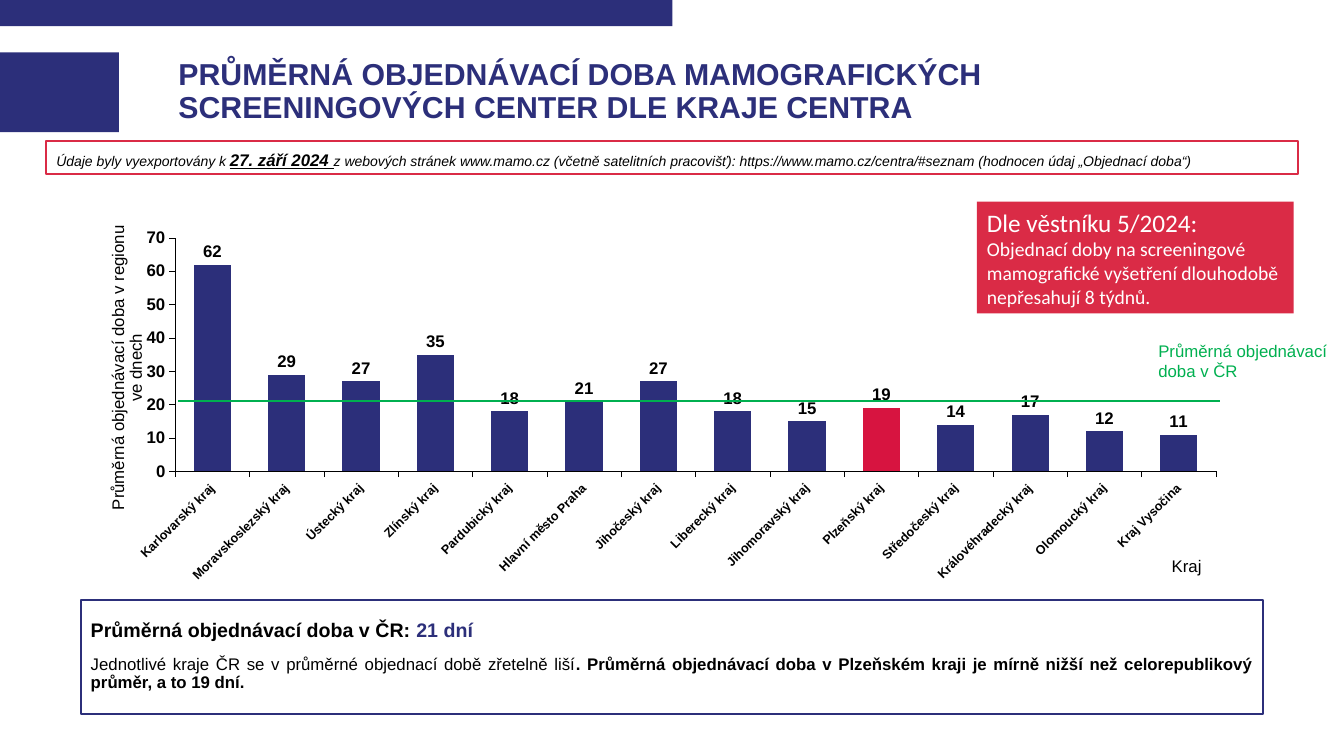
from lxml import etree
from pptx import Presentation
from pptx.chart.data import CategoryChartData
from pptx.dml.color import RGBColor
from pptx.enum.chart import XL_CHART_TYPE, XL_LABEL_POSITION, XL_TICK_MARK
from pptx.enum.shapes import MSO_CONNECTOR, MSO_SHAPE
from pptx.enum.text import MSO_ANCHOR, MSO_AUTO_SIZE, PP_ALIGN
from pptx.oxml import parse_xml
from pptx.oxml.ns import nsdecls, qn
from pptx.util import Inches, Pt

LEFT, JUSTIFY = PP_ALIGN.LEFT, PP_ALIGN.JUSTIFY
TOP, MIDDLE = MSO_ANCHOR.TOP, MSO_ANCHOR.MIDDLE
FIXED_SIZE = MSO_AUTO_SIZE.NONE
RECTANGLE = MSO_SHAPE.RECTANGLE
STRAIGHT = MSO_CONNECTOR.STRAIGHT
OUTSIDE = XL_TICK_MARK.OUTSIDE
OUTSIDE_END = XL_LABEL_POSITION.OUTSIDE_END
COLUMNS = XL_CHART_TYPE.COLUMN_CLUSTERED

COLORS = {
    "navy": "2C2F7A",
    "red": "DA2B46",
    "highlight": "D71440",
    "green": "00B050",
    "black": "000000",
    "white": "FFFFFF",
}

WAITING_DAYS = {
    "Karlovarský kraj": 62,
    "Moravskoslezský kraj": 29,
    "Ústecký kraj": 27,
    "Zlínský kraj": 35,
    "Pardubický kraj": 18,
    "Hlavní město Praha": 21,
    "Jihočeský kraj": 27,
    "Liberecký kraj": 18,
    "Jihomoravský kraj": 15,
    "Plzeňský kraj": 19,
    "Středočeský kraj": 14,
    "Královéhradecký kraj": 17,
    "Olomoucký kraj": 12,
    "Kraj Vysočina": 11,
}
HIGHLIGHTED_REGION = "Plzeňský kraj"


def color(name):
    return RGBColor.from_string(COLORS[name])


class SlideBuilder:
    def __init__(self, slide, font="Arial"):
        self.slide = slide
        self.font = font

    def style_font(self, font, size, color_name="black", bold=False, italic=False, underline=False, name=None):
        font.name = name or self.font
        font.size = Pt(size)
        font.color.rgb = color(color_name)
        font.bold = bold
        font.italic = italic
        font.underline = underline

    def place(self, shape, box):
        shape.left, shape.top, shape.width, shape.height = [Inches(length) for length in box]

    def fill_text(self, shape, paragraphs, align=LEFT, anchor=TOP, spacing=1.0, space_before=0):
        frame = shape.text_frame
        frame.word_wrap = True
        frame.auto_size = FIXED_SIZE
        frame.vertical_anchor = anchor
        for index, runs in enumerate(paragraphs):
            paragraph = frame.add_paragraph() if index else frame.paragraphs[0]
            paragraph.alignment = align
            paragraph.line_spacing = spacing
            paragraph.space_before = Pt(space_before if index else 0)
            for text, style in runs:
                if text == "\n":
                    paragraph.add_line_break()
                    continue
                run = paragraph.add_run()
                run.text = text
                self.style_font(run.font, **style)

    def rectangle(self, box, fill=None, line=None):
        shape = self.slide.shapes.add_shape(RECTANGLE, *[Inches(length) for length in box])
        shape.shadow.inherit = False
        if fill:
            shape.fill.solid()
            shape.fill.fore_color.rgb = color(fill)
        else:
            shape.fill.background()
        self.outline(shape, line)
        return shape

    def outline(self, shape, line):
        if line:
            shape.line.color.rgb = color(line)
            shape.line.width = Pt(1.5)
        else:
            shape.line.fill.background()

    def title(self, box, text):
        shape = self.slide.shapes.title
        self.place(shape, box)
        self.fill_text(shape, [[(text, dict(size=21.6, color_name="navy", bold=True))]], anchor=MIDDLE, spacing=0.9)
        shape.text_frame.margin_left = 0

    def body(self, box, paragraphs):
        shape = self.slide.placeholders[1]
        self.place(shape, box)
        self.outline(shape, "navy")
        self.fill_text(shape, paragraphs, JUSTIFY, MIDDLE, 0.9, 10)
        for paragraph in shape.text_frame.paragraphs:
            properties = paragraph._p.get_or_add_pPr()
            properties.set("marL", "0")
            properties.set("indent", "0")
            etree.SubElement(properties, qn("a:buNone"))

    def text(self, box, paragraphs):
        shape = self.slide.shapes.add_textbox(*[Inches(length) for length in box])
        self.fill_text(shape, paragraphs)

    def line(self, start, end, color_name):
        points = [Inches(length) for length in (*start, *end)]
        connector = self.slide.shapes.add_connector(STRAIGHT, *points)
        connector.line.color.rgb = color(color_name)
        connector.line.width = Pt(1)
        etree.SubElement(connector._element.spPr, qn("a:effectLst"))

    def set_layout(self, element, index, target=None, **fractions):
        for layout in element.findall(qn("c:layout")):
            element.remove(layout)
        layout = parse_xml(f"<c:layout {nsdecls('c')}><c:manualLayout/></c:layout>")
        settings = {"layoutTarget": target} if target else {}
        settings.update({f"{side}Mode": "edge" for side in ("x", "y")})
        settings.update(fractions)
        for tag, value in settings.items():
            etree.SubElement(layout[0], qn(f"c:{tag}")).set("val", str(value))
        element.insert(index, layout)

    def axis(self, axis, title, size, x, y):
        axis.has_major_gridlines = False
        axis.major_tick_mark = OUTSIDE
        axis.format.line.color.rgb = color("black")
        axis.format.line.width = Pt(0.25)
        self.style_font(axis.tick_labels.font, size, bold=True)
        frame = axis.axis_title.text_frame
        run = frame.paragraphs[0].add_run()
        run.text = title
        self.style_font(run.font, 12)
        self.set_layout(axis.axis_title._element, 1, x=x, y=y)
        return frame

    def column_chart(self, box, values, highlighted):
        data = CategoryChartData(number_format="#,##0")
        data.categories = list(values)
        data.add_series("Series 1", list(values.values()))
        frame = self.slide.shapes.add_chart(COLUMNS, *[Inches(length) for length in box], data)
        chart = frame.chart
        chart.has_title = False
        chart.has_legend = False
        self.style_font(chart.font, 12, bold=True)
        self.set_layout(chart._chartSpace.chart.plotArea, 0, "inner", x=0.08, y=0.07, w=0.88, h=0.6)

        category_axis, value_axis = chart.category_axis, chart.value_axis
        self.axis(category_axis, "Kraj", 9, 0.92, 0.88)
        labels = category_axis._element.find(qn("c:txPr")).find(qn("a:bodyPr"))
        labels.set("rot", "-2700000")
        title = self.axis(value_axis, "Průměrná objednávací doba v regionu ve dnech", 12, 0.02, 0.03)
        title._txBody.bodyPr.set("rot", "-5400000")
        title._txBody.bodyPr.set("vert", "horz")
        value_axis.minimum_scale, value_axis.maximum_scale = 0, 70
        value_axis.major_unit = 10

        plot = chart.plots[0]
        plot.gap_width = plot.overlap = 100
        plot.vary_by_categories = False
        series = plot.series[0]
        series.invert_if_negative = False
        point = series.points[list(values).index(highlighted)]
        for target, name in ((series, "navy"), (point, "highlight")):
            target.format.fill.solid()
            target.format.fill.fore_color.rgb = color(name)
        labels = series.data_labels
        labels.show_value = True
        labels.position = OUTSIDE_END
        labels.number_format = "#,##0"
        labels.number_format_is_linked = False
        self.style_font(labels.font, 12, bold=True)


def main():
    presentation = Presentation()
    presentation.slide_width, presentation.slide_height = Inches(13.33), Inches(7.5)
    builder = SlideBuilder(presentation.slides.add_slide(presentation.slide_layouts[1]))

    builder.rectangle((0, 0, 6.67, 0.26), fill="navy")
    builder.rectangle((0, 0.52, 1.18, 0.79), fill="navy")
    builder.title((1.77, 0.52, 10.72, 0.79),
                  "PRŮMĚRNÁ OBJEDNÁVACÍ DOBA MAMOGRAFICKÝCH SCREENINGOVÝCH CENTER DLE KRAJE CENTRA")
    builder.body((0.8, 5.95, 11.73, 1.13), [
        [("Průměrná objednávací doba v ČR: ", dict(size=14, bold=True)),
         ("21 dní", dict(size=14, color_name="navy", bold=True))],
        [("Jednotlivé kraje ČR se v průměrné objednací době zřetelně liší", dict(size=12)),
         (". Průměrná objednávací doba v Plzeňském kraji je mírně nižší než celorepublikový průměr, a to 19 dní.",
          dict(size=12, bold=True))],
    ])
    source = builder.rectangle((0.46, 1.4, 12.41, 0.33), line="red")
    builder.fill_text(source, [[
        ("Údaje byly vyexportovány k ", dict(size=10, italic=True)),
        ("27. září 2024 ", dict(size=12, bold=True, italic=True, underline=True)),
        ("z webových stránek www.mamo.cz (včetně satelitních pracovišť): "
         "https://www.mamo.cz/centra/#seznam (hodnocen údaj „Objednací doba“)", dict(size=10, italic=True)),
    ]], JUSTIFY, MIDDLE, 1.24)
    builder.column_chart((0.8, 2.09, 11.73, 3.86), WAITING_DAYS, HIGHLIGHTED_REGION)
    builder.text((11.39, 3.33, 1.94, 0.5),
                 [[("Průměrná objednávací doba v ČR", dict(size=12, color_name="green"))]])
    guideline = builder.rectangle((9.69, 2, 3.14, 1.11), fill="red")
    white = dict(color_name="white", name="Calibri")
    builder.fill_text(guideline, [[
        ("Dle věstníku 5/2024:", dict(size=18, **white)),
        ("\n", {}),
        ("Objednací doby na screeningové mamografické vyšetření dlouhodobě nepřesahují 8 týdnů.",
         dict(size=14, **white)),
    ]], anchor=MIDDLE)
    builder.line((1.77, 3.98), (12.1, 3.98), "green")
    presentation.save("out.pptx")


if __name__ == "__main__":
    main()
